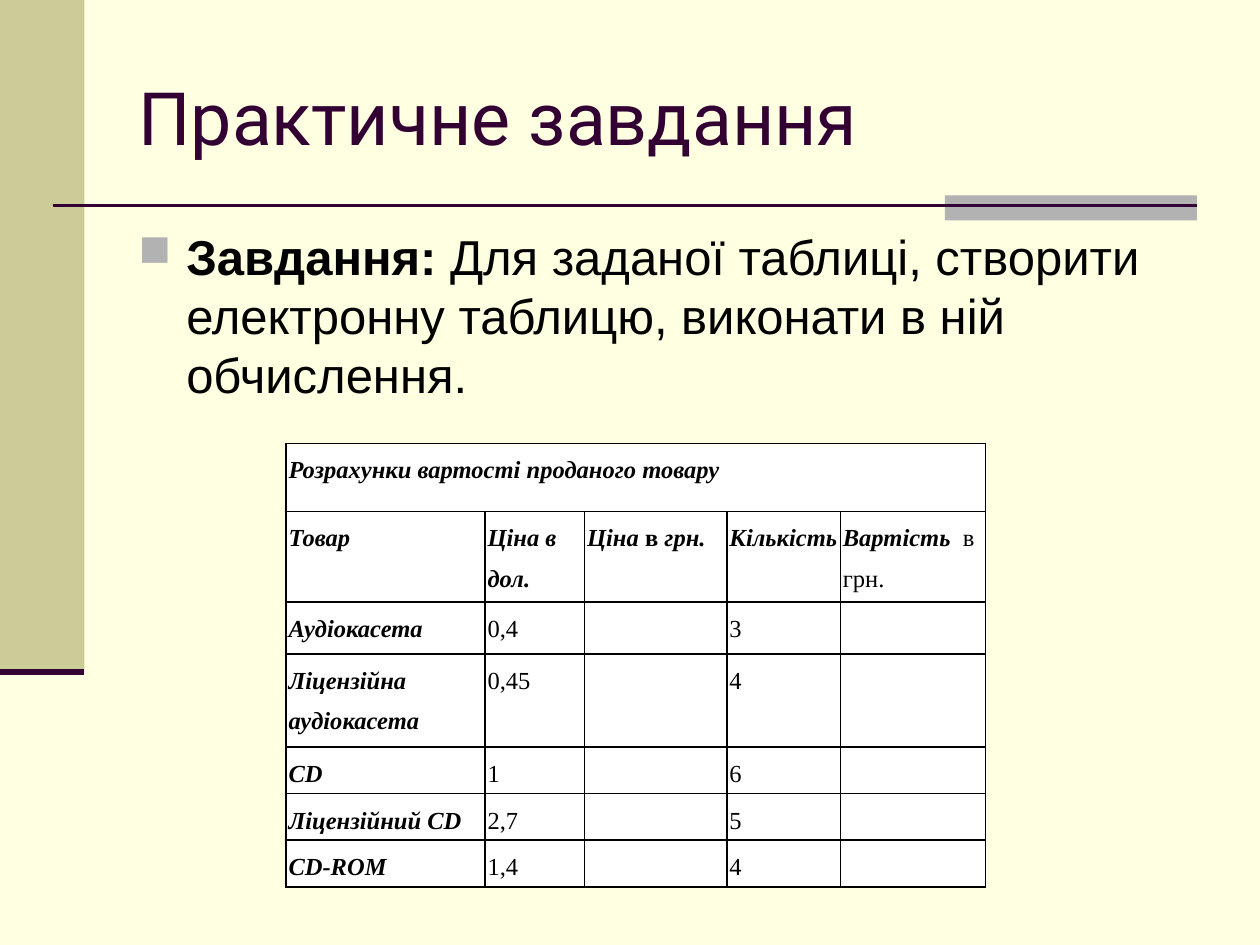
from dataclasses import dataclass

from lxml.etree import SubElement
from pptx import Presentation
from pptx.dml.color import RGBColor
from pptx.enum.shapes import MSO_CONNECTOR, MSO_SHAPE
from pptx.enum.text import MSO_ANCHOR
from pptx.oxml.ns import qn
from pptx.util import Inches, Pt


@dataclass(frozen=True)
class Theme:
    background: str = "FFFFE1"
    band: str = "CCCC99"
    accent: str = "B2B2B2"
    dark: str = "330033"
    text: str = "000000"
    cell: str = "FFFFFF"
    title_font: str = "Roboto"
    body_font: str = "Arial"
    table_font: str = "Times New Roman"
    title_size: int = 42
    body_size: int = 28
    table_size: int = 14


THEME = Theme()
BOLD_ITALIC = (True, True)
BOLD = (True, False)
PLAIN = (False, False)

TABLE_TITLE = "Розрахунки вартості проданого товару"
HEADERS = [
    [("Товар", BOLD_ITALIC)],
    [("Ціна в дол.", BOLD_ITALIC)],
    [("Ціна ", BOLD_ITALIC), ("в ", BOLD), ("грн.", BOLD_ITALIC)],
    [("Кількість", BOLD_ITALIC)],
    [("Вартість ", BOLD_ITALIC), (" в грн.", PLAIN)],
]
GOODS = [
    ("Аудіокасета", "0,4", "3"),
    ("Ліцензійна аудіокасета", "0,45", "4"),
    ("CD", "1", "6"),
    ("Ліцензійний CD", "2,7", "5"),
    ("CD-ROM", "1,4", "4"),
]
COLUMN_WIDTHS = [1.58, 0.79, 1.13, 0.9, 1.15]
ROW_HEIGHTS = [0.54, 0.72, 0.41, 0.74, 0.37, 0.37, 0.37]


def rgb(value):
    return RGBColor.from_string(value)


def inches(box):
    return [Inches(length) for length in box]


def set_font(paragraph, name, size, color):
    font = paragraph.font
    font.name, font.size = name, Pt(size)
    font.color.rgb = rgb(color)


def add_runs(paragraph, runs):
    for text, (bold, italic) in runs:
        run = paragraph.add_run()
        run.text = text
        run.font.bold, run.font.italic = bold, italic


def add_bar(slide, box, color):
    bar = slide.shapes.add_shape(MSO_SHAPE.RECTANGLE, *inches(box))
    bar.shadow.inherit = False
    bar.fill.solid()
    bar.fill.fore_color.rgb = rgb(color)
    bar.line.fill.background()


def add_rule(slide, left, right, y, weight):
    rule = slide.shapes.add_connector(
        MSO_CONNECTOR.STRAIGHT, *inches((left, y, right, y)))
    rule.line.color.rgb = rgb(THEME.dark)
    rule.line.width = Pt(weight)
    SubElement(rule._element.spPr, qn("a:effectLst"))


def add_decoration(slide):
    add_bar(slide, (0, 0, 0.67, 5.33), THEME.band)
    add_bar(slide, (7.5, 1.55, 2, 0.2), THEME.accent)
    add_rule(slide, 0.42, 9.5, 1.63, 1.5)
    add_rule(slide, 0, 0.67, 5.33, 3.5)


def add_text_box(slide, box, anchor):
    frame = slide.shapes.add_textbox(*inches(box)).text_frame
    frame.word_wrap = True
    frame.vertical_anchor = anchor
    return frame.paragraphs[0]


def add_title(slide, box):
    paragraph = add_text_box(slide, box, MSO_ANCHOR.MIDDLE)
    paragraph.text = "Практичне завдання"
    set_font(paragraph, THEME.title_font, THEME.title_size, THEME.dark)


def add_bullet(paragraph, indent):
    properties = paragraph._p.get_or_add_pPr()
    properties.set("marL", str(Inches(indent)))
    properties.set("indent", str(-Inches(indent)))
    color = SubElement(properties, qn("a:buClr"))
    SubElement(color, qn("a:srgbClr"), val=THEME.accent)
    SubElement(properties, qn("a:buSzPct"), val="90000")
    SubElement(properties, qn("a:buChar"), char="■")


def add_task(slide, box):
    paragraph = add_text_box(slide, box, MSO_ANCHOR.TOP)
    paragraph.space_before = Pt(THEME.body_size * 0.2)
    add_bullet(paragraph, 0.38)
    set_font(paragraph, THEME.body_font, THEME.body_size, THEME.text)
    add_runs(paragraph, [
        ("Завдання: ", BOLD),
        ("Для заданої таблиці, створити електронну таблицю, "
         "виконати в ній обчислення.", PLAIN),
    ])


def add_borders(cell):
    """Draw the four sides; they must precede the fill in the cell XML."""
    properties = cell._tc.get_or_add_tcPr()
    for side in ("lnL", "lnR", "lnT", "lnB"):
        border = SubElement(properties, qn(f"a:{side}"), w=str(Pt(1)))
        fill = SubElement(border, qn("a:solidFill"))
        SubElement(fill, qn("a:srgbClr"), val=THEME.text)


def fill_cell(cell, runs):
    cell.margin_left = cell.margin_right = Inches(0.02)
    cell.margin_top = cell.margin_bottom = 0
    add_borders(cell)
    cell.fill.solid()
    cell.fill.fore_color.rgb = rgb(THEME.cell)
    paragraph = cell.text_frame.paragraphs[0]
    if runs:
        paragraph.line_spacing = 1.5
    set_font(paragraph, THEME.table_font, THEME.table_size, THEME.text)
    add_runs(paragraph, runs)


def add_price_table(slide, box):
    rows = [[[(TABLE_TITLE, BOLD_ITALIC)], [], [], [], []], HEADERS]
    for name, price, quantity in GOODS:
        rows.append([[(name, BOLD_ITALIC)], [(price, PLAIN)], [],
                     [(quantity, PLAIN)], []])
    table = slide.shapes.add_table(
        len(rows), len(COLUMN_WIDTHS), *inches(box)).table
    table.first_row = table.horz_banding = False
    for column, width in zip(table.columns, COLUMN_WIDTHS):
        column.width = Inches(width)
    for row, height, contents in zip(table.rows, ROW_HEIGHTS, rows):
        row.height = Inches(height)
        for cell, runs in zip(row.cells, contents):
            fill_cell(cell, runs)
    table.cell(0, 0).merge(table.cell(0, len(COLUMN_WIDTHS) - 1))


def main():
    presentation = Presentation()
    presentation.slide_width = Inches(10)
    presentation.slide_height = Inches(7.5)
    slide = presentation.slides.add_slide(presentation.slide_layouts[6])
    slide.background.fill.solid()
    slide.background.fill.fore_color.rgb = rgb(THEME.background)
    add_decoration(slide)
    add_title(slide, (1, 0.3, 8.5, 1.25))
    add_task(slide, (1, 1.75, 8.45, 4.95))
    add_price_table(slide, (2.27, 3.52, 5.55, 3.53))
    presentation.save("out.pptx")


if __name__ == "__main__":
    main()
